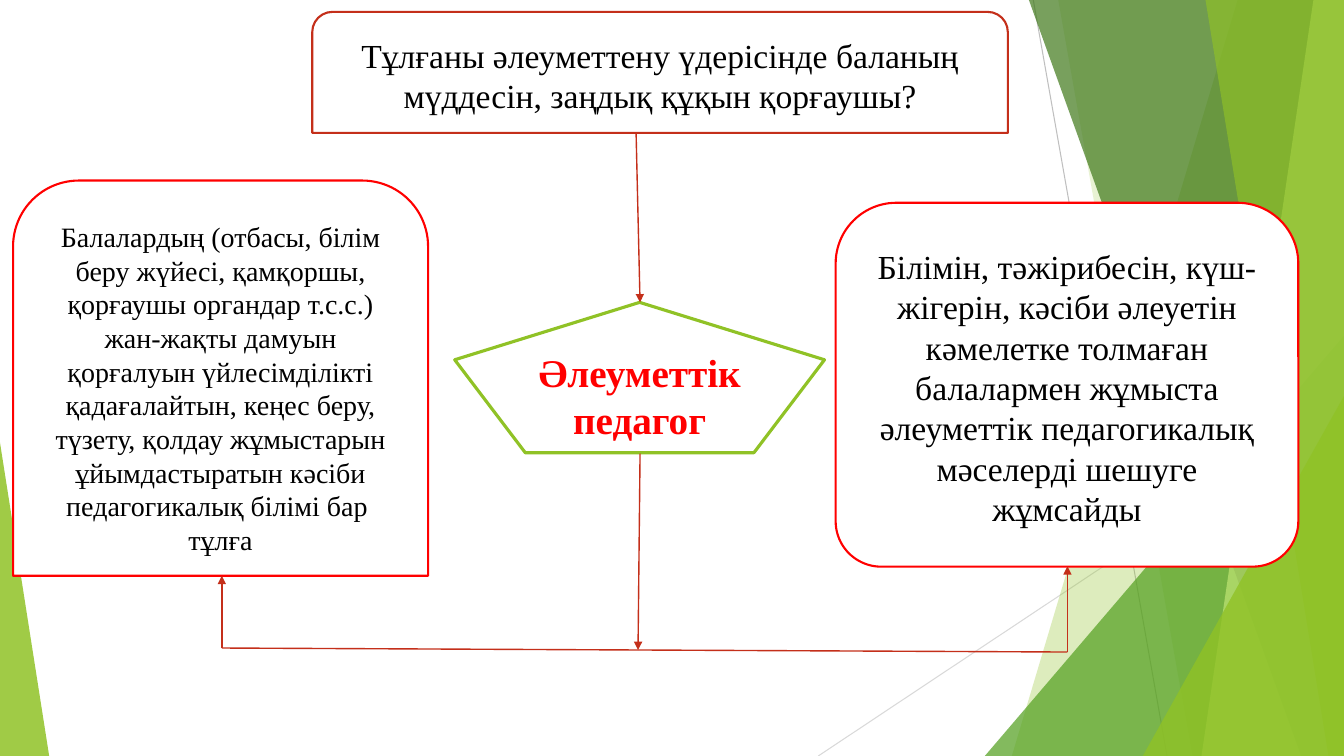
"""Builds the slide about the role of the social pedagogue."""
from lxml import etree
from pptx import Presentation, util as u
from pptx.dml.color import RGBColor
from pptx.enum import shapes, text
from pptx.oxml import ns

WIDTH, HEIGHT = 33.87, 19.05
FONT = "Times New Roman"
GREEN, RED, BRICK, WHITE, BLACK = "90C226", "FF0000", "C42F1A", "FFFFFF", "000000"
KIND = shapes.MSO_SHAPE

BACK_LINES = [
    ((26.04, 0), (29.41, HEIGHT), "BFBFBF"),
    ((WIDTH, 10.24), (20.62, HEIGHT), "D9D9D9"),
]
# facet: top and bottom x of the left edge; triangle: left, top, width, height
DECOR = [
    ("facet", (31.19, 25.5), GREEN, 30),
    ("facet", (26.67, 30.05), GREEN, 20),
    ("triangle", (24.82, 8.46, 9.05, 10.59), "54A021", 72),
    ("facet", (25.93, 32.79), "3F7819", 70),
    ("facet", (33.1, 30.28), "C0E474", 70),
    ("facet", (30.38, 33.48), GREEN, 65),
    ("triangle", (28.8, 9.98, 5.07, 9.07), GREEN, 80),
    ("triangle", (0, 11.15, 1.24, 7.9), GREEN, 85),
]
BOXES = [
    (KIND.REGULAR_PENTAGON, (11.46, 7.62, 9.32, 3.79), (), GREEN, 2.25,
     "Әлеуметтік педагог", {"size": 28, "color": RED, "bold": True}),
    (KIND.ROUND_2_SAME_RECTANGLE, (7.87, 0.3, 17.53, 3.05), (), BRICK, 1.5,
     "Тұлғаны әлеуметтену үдерісінде баланың мүддесін, заңдық құқын қорғаушы?",
     {"size": 24, "color": BLACK}),
    (KIND.ROUND_2_SAME_RECTANGLE, (0.33, 4.55, 10.46, 9.96), (), RED, 1.5,
     "Балалардың (отбасы, білім беру жүйесі, қамқоршы, қорғаушы органдар т.с.с.) "
     "жан-жақты дамуын қорғалуын үйлесімділікті қадағалайтын, кеңес беру, түзету, "
     "қолдау жұмыстарын ұйымдастыратын кәсіби педагогикалық білімі бар  тұлға",
     {"size": 20, "color": BLACK}),
    (KIND.ROUND_2_SAME_RECTANGLE, (21.06, 5.11, 11.66, 9.17), (0.167, 0.125), RED, 1.5,
     "Білімін, тәжірибесін, күш-жігерін, кәсіби әлеуетін кәмелетке толмаған "
     "балалармен жұмыста әлеуметтік педагогикалық мәселерді шешуге жұмсайды",
     {"size": 24, "color": BLACK}),
]
LINKS = [
    ((16.03, 3.35), (16.13, 7.62), True),
    ((5.59, 16.33), (26.9, 16.43), False),
    ((16.13, 11.43), (16.08, 16.38), True),
    ((5.59, 16.33), (5.59, 14.51), True),
    ((26.9, 16.43), (26.9, 14.27), True),
]


def paint(target, color, alpha=100):
    target.solid()
    target.fore_color.rgb = RGBColor.from_string(color)
    if alpha < 100:
        tint = target.fore_color._xFill.find(ns.qn("a:srgbClr"))
        etree.SubElement(tint, ns.qn("a:alpha"), val=str(alpha * 1000))


def add_line(page, start, end, color, width, arrow=False):
    ends = [u.Cm(value) for value in (*start, *end)]
    line = page.shapes.add_connector(shapes.MSO_CONNECTOR.STRAIGHT, *ends)
    paint(line.line.fill, color)
    line.line.width = u.Pt(width)
    if arrow:
        etree.SubElement(line.line._get_or_add_ln(), ns.qn("a:tailEnd"), type="triangle")
    etree.SubElement(line._element.spPr, ns.qn("a:effectLst"))


def add_preset(page, kind, place, adjustments=()):
    shape = page.shapes.add_shape(kind, *[u.Cm(value) for value in place])
    for index, value in enumerate(adjustments):
        shape.adjustments[index] = value
    return shape


def add_facet(page, edge):
    top, bottom = edge
    corners = [(top, 0), (WIDTH, 0), (WIDTH, HEIGHT), (bottom, HEIGHT)]
    points = [(u.Cm(x), u.Cm(y)) for x, y in corners]
    builder = page.shapes.build_freeform(*points[0])
    builder.add_line_segments(points[1:], close=True)
    return builder.convert_to_shape()


def add_decor(page, kind, place, color, alpha):
    if kind == "facet":
        shape = add_facet(page, place)
    else:
        apex = 1 if place[0] else 0
        shape = add_preset(page, KIND.ISOSCELES_TRIANGLE, place, [apex])
    shape.shadow.inherit = False
    paint(shape.fill, color, alpha)
    shape.line.fill.background()


def add_box(page, kind, place, adjustments, border, width, words, style):
    box = add_preset(page, kind, place, adjustments)
    box.shadow.inherit = False
    paint(box.fill, WHITE)
    paint(box.line.fill, border)
    box.line.width = u.Pt(width)
    frame = box.text_frame
    frame.word_wrap = True
    frame.vertical_anchor = text.MSO_ANCHOR.MIDDLE
    para = frame.paragraphs[0]
    para.alignment = text.PP_ALIGN.CENTER
    span = para.add_run()
    span.text = words
    looks = {"name": FONT, "size": u.Pt(style["size"]), "bold": style.get("bold", False)}
    for name, value in looks.items():
        setattr(span.font, name, value)
    paint(span.font.fill, style["color"])


def main():
    deck = Presentation()
    deck.slide_width, deck.slide_height = u.Cm(WIDTH), u.Cm(HEIGHT)
    page = deck.slides.add_slide(deck.slide_layouts[6])
    for start, end, color in BACK_LINES:
        add_line(page, start, end, color, 0.75)
    for decor in DECOR:
        add_decor(page, *decor)
    for box in BOXES:
        add_box(page, *box)
    for start, end, arrow in LINKS:
        add_line(page, start, end, BRICK, 1, arrow)
    deck.save("out.pptx")


if __name__ == "__main__":
    main()
